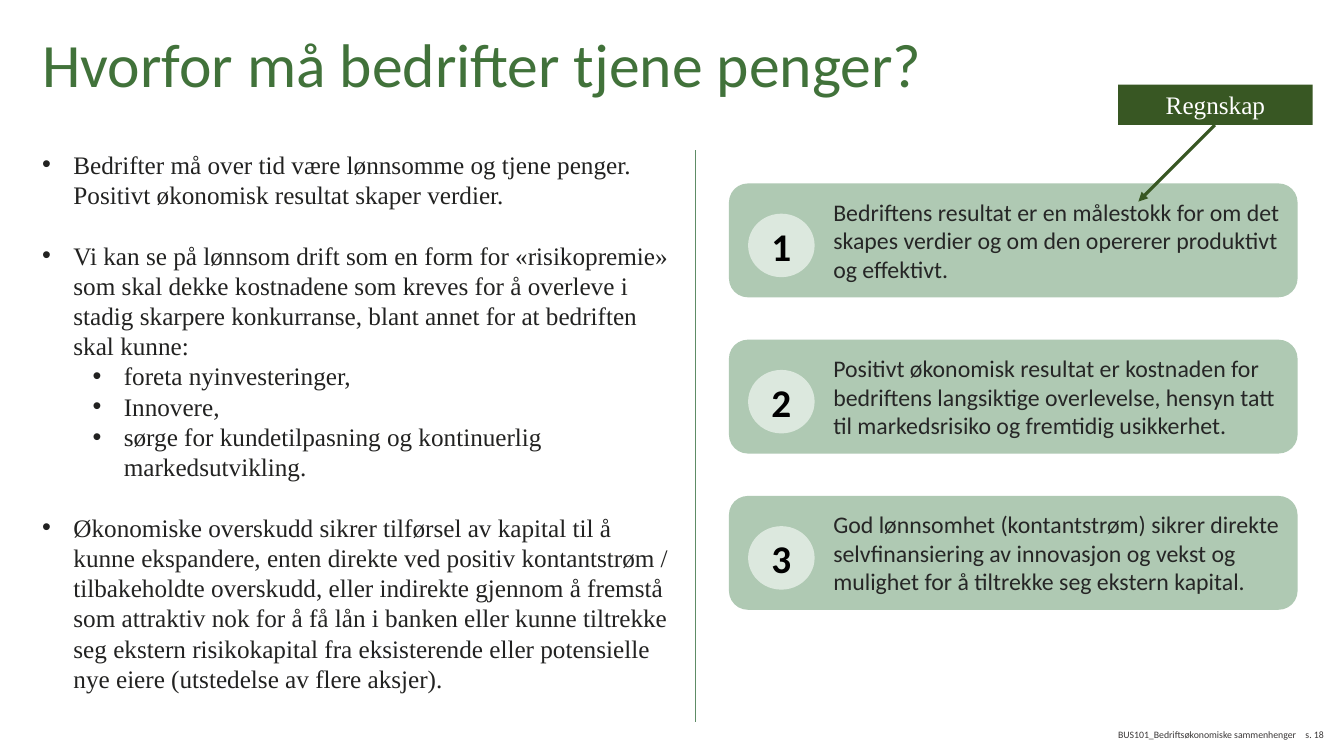
from lxml import etree
from pptx import Presentation
from pptx.dml.color import RGBColor
from pptx.enum.shapes import MSO_CONNECTOR as CONN, MSO_SHAPE as SHAPE
from pptx.enum.text import MSO_ANCHOR as ANCHOR, PP_ALIGN as ALIGN
from pptx.oxml.ns import qn
from pptx.util import Inches, Pt

BULLETS = [
    (0, 0, "Bedrifter må over tid være lønnsomme og tjene penger. Positivt økonomisk resultat skaper verdier."),
    (0, 1, "Vi kan se på lønnsom drift som en form for «risikopremie» som skal dekke kostnadene som kreves "
           "for å overleve i stadig skarpere konkurranse, blant annet for at bedriften skal kunne:"),
    (1, 0, "foreta nyinvesteringer,"),
    (1, 0, "Innovere,"),
    (1, 0, "sørge for kundetilpasning og kontinuerlig markedsutvikling."),
    (0, 1, "Økonomiske overskudd sikrer tilførsel av kapital til å kunne ekspandere, enten direkte ved positiv "
           "kontantstrøm / tilbakeholdte overskudd, eller indirekte gjennom å fremstå som attraktiv nok for å "
           "få lån i banken eller kunne tiltrekke seg ekstern risikokapital fra eksisterende eller potensielle "
           "nye eiere (utstedelse av flere aksjer)."),
]
REASONS = [
    "Bedriftens resultat er en målestokk for om det skapes verdier og om den opererer produktivt og effektivt.",
    "Positivt økonomisk resultat er kostnaden for bedriftens langsiktige overlevelse, "
    "hensyn tatt til markedsrisiko og fremtidig usikkerhet.",
    "God lønnsomhet (kontantstrøm) sikrer direkte selvfinansiering av innovasjon og vekst "
    "og mulighet for å tiltrekke seg ekstern kapital.",
]


def rgb(value):
    return RGBColor.from_string(value)


class SlideBuilder:
    sans, serif = "Calibri", "Times New Roman"
    bullet_size, line_pitch = 18, 21.6

    def __init__(self, s):
        self.s = s

    def frame(self, sp, inset=(0.1, 0.05, 0.1, 0.05), anchor=ANCHOR.MIDDLE):
        tf = sp.text_frame
        left, top, right, bottom = map(Inches, inset)
        formats = {"word_wrap": True, "vertical_anchor": anchor, "margin_left": left,
                   "margin_top": top, "margin_right": right, "margin_bottom": bottom}
        for name, value in formats.items():
            setattr(tf, name, value)
        return tf

    def run(self, p, text, size, color, font=sans, bold=False, align=ALIGN.LEFT):
        p.alignment = align
        r = p.add_run()
        r.text = text
        for name, value in {"name": font, "size": Pt(size), "bold": bold}.items():
            setattr(r.font, name, value)
        r.font.color.rgb = rgb(color)

    def text(self, box, text, size, color, inset=(0.1, 0.05, 0.1, 0.05), align=ALIGN.LEFT, spacing=1.0):
        sp = self.s.shapes.add_textbox(*map(Inches, box))
        p = self.frame(sp, inset).paragraphs[0]
        p.line_spacing = spacing
        self.run(p, text, size, color, align=align)

    def bullets(self, box, items, color):
        sp = self.s.shapes.add_textbox(*map(Inches, box))
        tf = self.frame(sp, anchor=ANCHOR.TOP)
        for i, (level, gap, text) in enumerate(items):
            p = tf.add_paragraph() if i else tf.paragraphs[0]
            p.level = level
            p.line_spacing = Pt(self.line_pitch)
            p.space_before = Pt(gap * self.line_pitch)
            self.run(p, text, self.bullet_size, color, self.serif)
            ppr = p._p.get_or_add_pPr()
            ppr.set("marL", str(Inches(0.31 + 0.5 * level)))
            ppr.set("indent", str(Inches(-0.31)))
            etree.SubElement(ppr, qn("a:buFont"), typeface="Arial")
            etree.SubElement(ppr, qn("a:buChar"), char="•")

    def shape(self, kind, box, fill, text, size, color, inset=(0.1, 0.05, 0.1, 0.05), **style):
        sp = self.s.shapes.add_shape(kind, *map(Inches, box))
        sp.shadow.inherit = False
        sp.fill.solid()
        sp.fill.fore_color.rgb = rgb(fill)
        sp.line.fill.background()
        self.run(self.frame(sp, inset).paragraphs[0], text, size, color, **style)

    def line(self, start, end, color, width, arrow=False):
        cx = self.s.shapes.add_connector(CONN.STRAIGHT, *map(Inches, start + end))
        cx.line.color.rgb = rgb(color)
        cx.line.width = Pt(width)
        sppr = cx._element.spPr
        if arrow:
            etree.SubElement(sppr.find(qn("a:ln")), qn("a:tailEnd"), type="triangle")
        etree.SubElement(sppr, qn("a:effectLst"))


def main():
    prs = Presentation()
    prs.slide_width, prs.slide_height = Inches(13.33), Inches(7.5)
    b = SlideBuilder(prs.slides.add_slide(prs.slide_layouts[6]))
    flush = (0, 0, 0, 0)

    b.text((11.09, 7.16, 2.14, 0.26), "BUS101_Bedriftsøkonomiske sammenhenger", 7, "3B3838", flush)
    b.text((12.87, 7.16, 0.26, 0.25), "s. 18", 7, "3B3838", flush, ALIGN.RIGHT)
    b.text((0.32, 0.29, 9.86, 0.77), "Hvorfor må bedrifter tjene penger?", 44, "41723A", spacing=0.9)
    b.bullets((0.32, 1.43, 6.48, 5.55), BULLETS, "222221")

    for i, reason in enumerate(REASONS):
        top = 1.82 + 1.55 * i
        b.shape(SHAPE.ROUNDED_RECTANGLE, (7.23, top, 5.64, 1.13), "AFC9B3", reason, 17, "262626",
                (0.98, 0.05, 0.1, 0.05))
        b.shape(SHAPE.OVAL, (7.42, top + 0.3, 0.66, 0.63), "DCE8DE", str(i + 1), 28, "000000",
                flush, bold=True, align=ALIGN.CENTER)

    b.line((6.9, 1.49), (6.9, 7.16), "5E8C66", 0.5)
    b.line((12.05, 1.24), (11.29, 2), "385723", 2.25, arrow=True)
    b.shape(SHAPE.RECTANGLE, (11.09, 0.84, 1.93, 0.4), "385723", "Regnskap", 18, "FFFFFF",
            font=b.serif, align=ALIGN.CENTER)
    prs.save("out.pptx")


if __name__ == "__main__":
    main()
